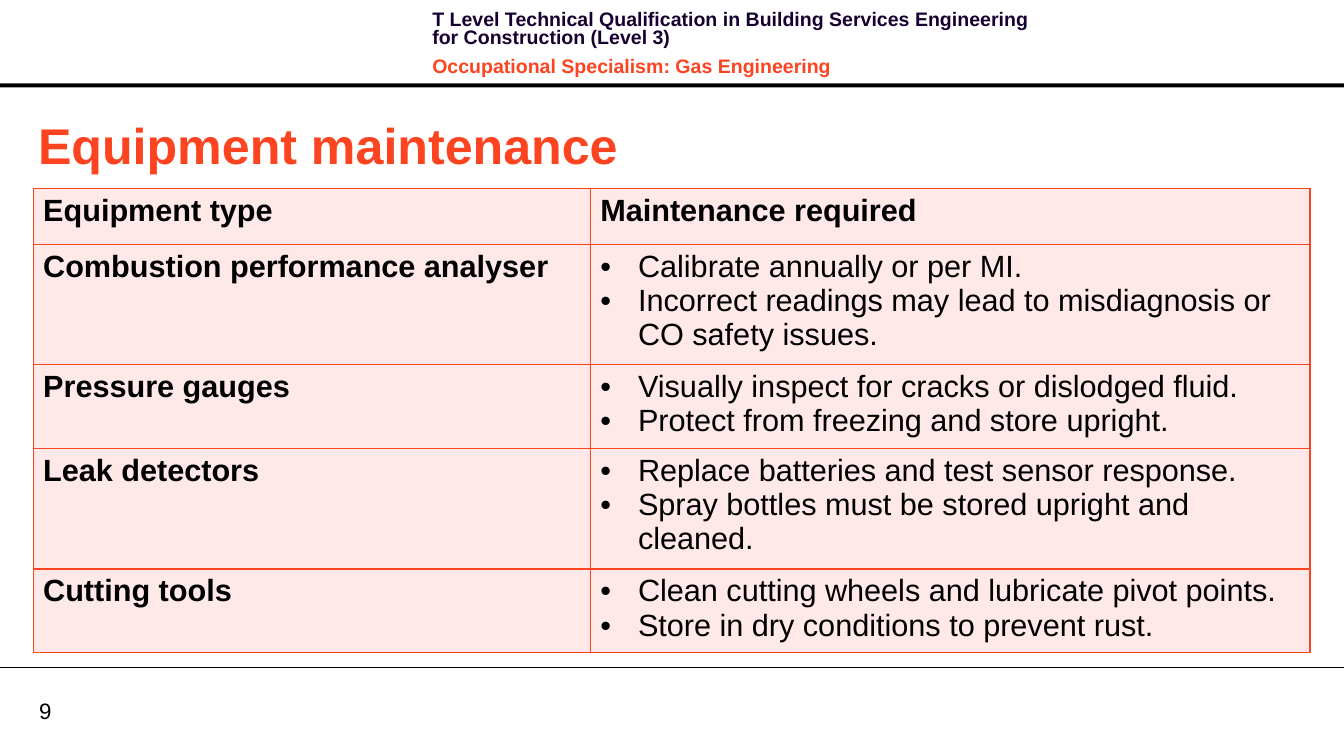
from lxml import etree
from pptx import Presentation
from pptx.dml.color import RGBColor
from pptx.enum.shapes import MSO_CONNECTOR, MSO_SHAPE
from pptx.enum.text import MSO_ANCHOR
from pptx.oxml.ns import qn
from pptx.util import Pt

RECTANGLE = MSO_SHAPE.RECTANGLE
STRAIGHT = MSO_CONNECTOR.STRAIGHT
TOP = MSO_ANCHOR.TOP
MIDDLE = MSO_ANCHOR.MIDDLE

THEME = {
    "font": "Arial",
    "black": "000000",
    "navy": "170130",
    "orange": "FC4421",
    "pink": "FEE9E8",
    "title": 36,
    "table": 22,
    "number": 16,
    "header": 14,
}
SLIDE_WIDTH = 964
SLIDE_HEIGHT = 538.6
BULLET_INDENT = 27

HEADER_LINES = [
    ("T Level Technical Qualification in Building Services Engineering for Construction (Level 3)", "navy"),
    ("Occupational Specialism: Gas Engineering", "orange"),
]
HEADINGS = ["Equipment type", "Maintenance required"]
EQUIPMENT = [
    ("Combustion performance analyser", 81, [
        "Calibrate annually or per MI.",
        "Incorrect readings may lead to misdiagnosis or CO safety issues.",
    ]),
    ("Pressure gauges", 56.4, [
        "Visually inspect for cracks or dislodged fluid.",
        "Protect from freezing and store upright.",
    ]),
    ("Leak detectors", 81, [
        "Replace batteries and test sensor response.",
        "Spray bottles must be stored upright and cleaned.",
    ]),
    ("Cutting tools", 56.4, [
        "Clean cutting wheels and lubricate pivot points.",
        "Store in dry conditions to prevent rust.",
    ]),
]


def write_paragraph(frame, index, text, size, color, bold=False, bullet=False):
    paragraph = frame.paragraphs[0] if index == 0 else frame.add_paragraph()
    paragraph.text = text
    if bullet:
        properties = paragraph._p.get_or_add_pPr()
        properties.set("marL", str(Pt(BULLET_INDENT)))
        properties.set("indent", str(-Pt(BULLET_INDENT)))
        etree.SubElement(properties, qn("a:buFont"), typeface=THEME["font"])
        etree.SubElement(properties, qn("a:buChar"), char="•")
    paragraph.font.name = THEME["font"]
    paragraph.font.size = Pt(THEME[size])
    paragraph.font.bold = bold
    paragraph.font.color.rgb = RGBColor.from_string(THEME[color])
    return paragraph


def add_text_frame(left, top, width, height, anchor):
    frame = slide.shapes.add_textbox(Pt(left), Pt(top), Pt(width), Pt(height)).text_frame
    frame.word_wrap = True
    frame.vertical_anchor = anchor
    return frame


presentation = Presentation()
presentation.slide_width = Pt(SLIDE_WIDTH)
presentation.slide_height = Pt(SLIDE_HEIGHT)
slide = presentation.slides.add_slide(presentation.slide_layouts[6])

header_bar = slide.shapes.add_shape(RECTANGLE, 0, Pt(59.8), Pt(SLIDE_WIDTH), Pt(2.9))
header_bar.shadow.inherit = False
header_bar.fill.solid()
header_bar.fill.fore_color.rgb = RGBColor.from_string(THEME["black"])
header_bar.line.fill.background()

footer_line = slide.shapes.add_connector(STRAIGHT, 0, Pt(478.8), Pt(SLIDE_WIDTH), Pt(478.8))
footer_line.line.width = Pt(0.75)
footer_line.line.color.rgb = RGBColor.from_string(THEME["black"])
etree.SubElement(footer_line._element.spPr, qn("a:effectLst"))

number_frame = add_text_frame(28, 499.8, 46, 19.4, MIDDLE)
number_frame.margin_left = number_frame.margin_right = 0
number_frame.margin_top = number_frame.margin_bottom = 0
write_paragraph(number_frame, 0, "9", "number", "black")

header_frame = add_text_frame(303, 5, 458.6, 46, TOP)
for index, (text, color) in enumerate(HEADER_LINES):
    paragraph = write_paragraph(header_frame, index, text, "header", color, bold=True)
    paragraph.line_spacing = Pt(13.1)
    paragraph.space_before = Pt(4 if index else 0)
    paragraph.space_after = Pt(4)

title_frame = add_text_frame(20.2, 77.8, 915.8, 51, MIDDLE)
write_paragraph(title_frame, 0, "Equipment maintenance", "title", "orange", bold=True)

row_heights = [40] + [height for _, height, _ in EQUIPMENT]
table = slide.shapes.add_table(
    len(row_heights), 2, Pt(23.8), Pt(135.2), Pt(915.8), Pt(sum(row_heights))
).table
for column, width in zip(table.columns, [399.6, 516.2]):
    column.width = Pt(width)
for row, height in zip(table.rows, row_heights):
    row.height = Pt(height)

for column_index, heading in enumerate(HEADINGS):
    write_paragraph(table.cell(0, column_index).text_frame, 0, heading, "table", "black", bold=True)
for row_index, (name, _, tasks) in enumerate(EQUIPMENT, start=1):
    write_paragraph(table.cell(row_index, 0).text_frame, 0, name, "table", "black", bold=True)
    for index, task in enumerate(tasks):
        write_paragraph(table.cell(row_index, 1).text_frame, index, task, "table", "black", bullet=True)

for cell in table.iter_cells():
    properties = cell._tc.get_or_add_tcPr()
    for side in ("lnL", "lnR", "lnT", "lnB"):
        border = etree.SubElement(properties, qn(f"a:{side}"), w=str(Pt(1)))
        border_fill = etree.SubElement(border, qn("a:solidFill"))
        etree.SubElement(border_fill, qn("a:srgbClr"), val=THEME["orange"])
    cell.fill.solid()
    cell.fill.fore_color.rgb = RGBColor.from_string(THEME["pink"])

presentation.save("out.pptx")
